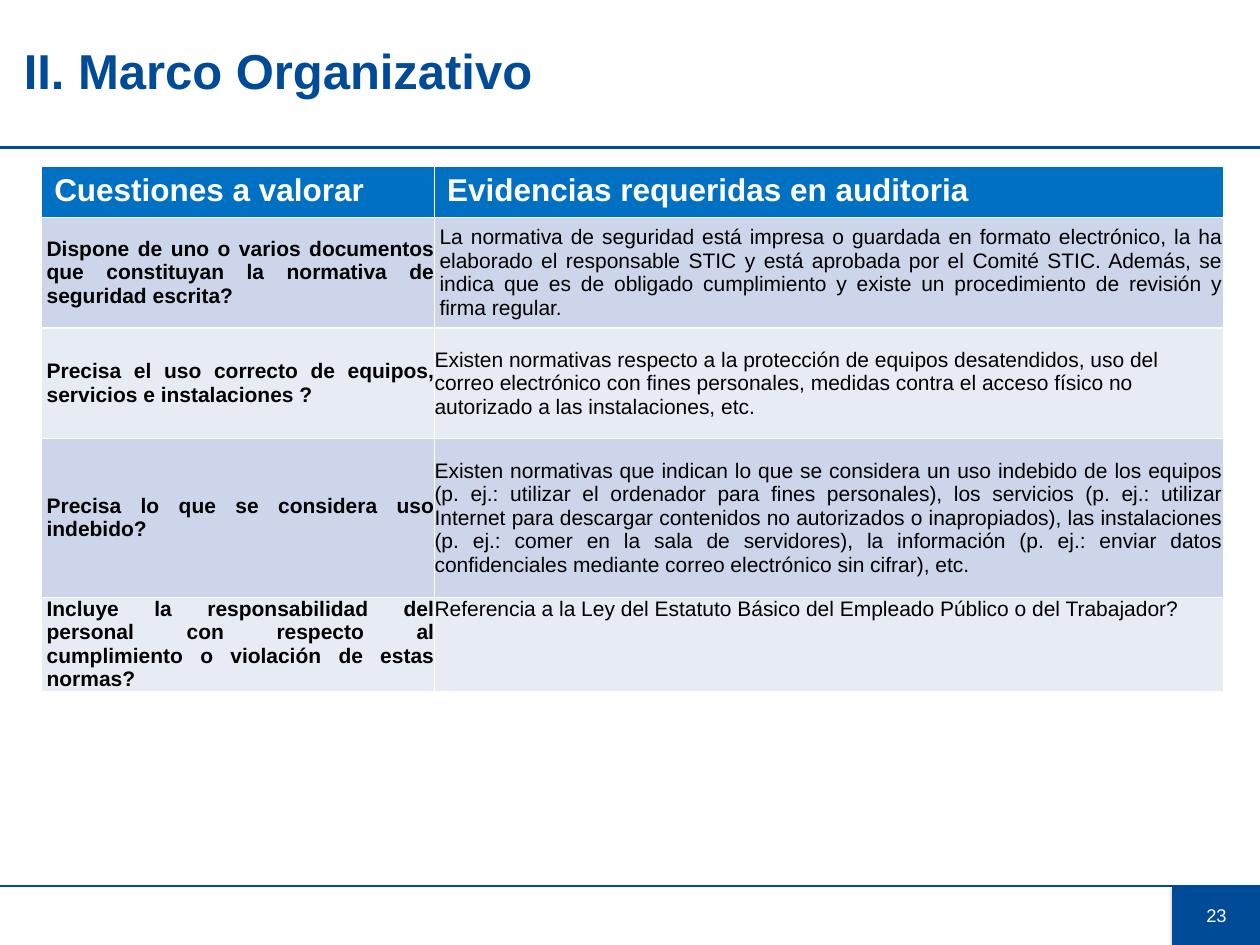
from dataclasses import dataclass

from lxml.etree import SubElement
from pptx import Presentation
from pptx.dml.color import RGBColor
from pptx.enum.shapes import MSO_CONNECTOR, MSO_SHAPE
from pptx.enum.text import MSO_ANCHOR, MSO_AUTO_SIZE, PP_ALIGN
from pptx.oxml.ns import qn
from pptx.slide import Slide
from pptx.table import _Cell
from pptx.util import Cm, Pt

NAVY = RGBColor(0x00, 0x4B, 0x98)
HEADER_BLUE = RGBColor(0x00, 0x70, 0xC2)
BAND_DARK = RGBColor(0xCC, 0xD5, 0xE9)
BAND_LIGHT = RGBColor(0xE7, 0xEB, 0xF4)
WHITE = RGBColor(0xFF, 0xFF, 0xFF)
BLACK = RGBColor(0x00, 0x00, 0x00)
FONT = "Arial"
SLIDE_W, SLIDE_H = Cm(25.4), Cm(19.05)
FOOTER_TOP = Cm(17.86)
INDENT = Cm(0.1)


@dataclass
class Question:
    """A question to assess, with the evidence an audit requires."""

    text: str
    evidence: str
    height: float
    align: PP_ALIGN = PP_ALIGN.LEFT
    indent: int = 0
    anchor: MSO_ANCHOR = MSO_ANCHOR.MIDDLE


HEADINGS = ("Cuestiones a valorar", "Evidencias requeridas en auditoria")
QUESTIONS = [
    Question(
        "Dispone de uno o varios documentos que constituyan la normativa de seguridad escrita?",
        "La normativa de seguridad está impresa o guardada en formato electrónico, la ha "
        "elaborado el responsable STIC y está aprobada por el Comité STIC. Además, se indica "
        "que es de obligado cumplimiento y existe un procedimiento de revisión y firma regular.",
        2.23, align=PP_ALIGN.JUSTIFY, indent=INDENT,
    ),
    Question(
        "Precisa el uso correcto de equipos, servicios e instalaciones ?",
        "Existen normativas respecto a la protección de equipos desatendidos, uso del correo "
        "electrónico con fines personales, medidas contra el acceso físico no autorizado a las "
        "instalaciones, etc.",
        2.23,
    ),
    Question(
        "Precisa lo que se considera uso indebido?",
        "Existen normativas que indican lo que se considera un uso indebido de los equipos "
        "(p. ej.: utilizar el ordenador para fines personales), los servicios (p. ej.: utilizar "
        "Internet para descargar contenidos no autorizados o inapropiados), las instalaciones "
        "(p. ej.: comer en la sala de servidores), la información (p. ej.: enviar datos "
        "confidenciales mediante correo electrónico sin cifrar), etc.",
        3.2, align=PP_ALIGN.JUSTIFY,
    ),
    Question(
        "Incluye la responsabilidad del personal con respecto al cumplimiento o violación de "
        "estas normas? ",
        "Referencia a la Ley del Estatuto Básico del Empleado Público o del Trabajador?",
        1.88, anchor=MSO_ANCHOR.TOP,
    ),
]


def style_font(p, size: float, color: RGBColor, bold: bool = False) -> None:
    """Set the font of a whole paragraph."""
    p.font.name, p.font.size, p.font.bold = FONT, Pt(size), bold
    p.font.color.rgb = color


def add_rule(s: Slide, y: int) -> None:
    """Draw a horizontal rule across the slide."""
    line = s.shapes.add_connector(MSO_CONNECTOR.STRAIGHT, 0, y, SLIDE_W, y)
    line.line.color.rgb, line.line.width = NAVY, Pt(1.5)
    SubElement(line._element.spPr, qn("a:effectLst"))


def add_page_number(s: Slide, number: str) -> None:
    """Draw the page number box with its soft shadow."""
    left = Cm(23.65)
    sp = s.shapes.add_shape(
        MSO_SHAPE.RECTANGLE, left, FOOTER_TOP, SLIDE_W - left, SLIDE_H - FOOTER_TOP)
    sp.fill.solid()
    sp.fill.fore_color.rgb = NAVY
    sp.line.color.rgb, sp.line.width = NAVY, Pt(0.75)
    sp.shadow.inherit = False
    effects = sp._element.spPr.find(qn("a:effectLst"))
    shadow = SubElement(effects, qn("a:outerShdw"), blurRad=str(Pt(3.1)),
                        dist=str(Pt(1.8)), dir="5400000", rotWithShape="0")
    color = SubElement(shadow, qn("a:srgbClr"), val=str(BLACK))
    SubElement(color, qn("a:alpha"), val="35000")
    tf = sp.text_frame
    tf.vertical_anchor = MSO_ANCHOR.MIDDLE
    p = tf.paragraphs[0]
    p.text, p.alignment = number, PP_ALIGN.CENTER
    style_font(p, 10.5, WHITE)


def set_title(s: Slide, text: str) -> None:
    """Fill and place the title."""
    sp = s.shapes.title
    sp.left, sp.top, sp.width, sp.height = Cm(0.48), 0, Cm(24.2), Cm(2.95)
    tf = sp.text_frame
    tf.auto_size, tf.vertical_anchor = MSO_AUTO_SIZE.NONE, MSO_ANCHOR.MIDDLE
    tf.margin_left = tf.margin_right = 0
    p = tf.paragraphs[0]
    p.text, p.alignment, p.line_spacing = text, PP_ALIGN.LEFT, 0.9
    style_font(p, 28, NAVY, bold=True)


def fill_cell(cell: _Cell, text: str, fill: RGBColor, size: float, color: RGBColor,
              bold: bool) -> None:
    """Write a table cell and colour it."""
    cell.fill.solid()
    cell.fill.fore_color.rgb = fill
    p = cell.text_frame.paragraphs[0]
    p.text = text
    style_font(p, size, color, bold)


def set_layout(cell: _Cell, align: PP_ALIGN, indent: int, anchor: MSO_ANCHOR) -> None:
    """Remove the margins of a body cell and place its text."""
    cell.margin_left = cell.margin_right = cell.margin_top = cell.margin_bottom = 0
    cell.vertical_anchor = anchor
    p = cell.text_frame.paragraphs[0]
    p.alignment = align
    p._p.get_or_add_pPr().set("marL", str(indent))


def add_questions(s: Slide) -> None:
    """Build the table of questions and evidence."""
    widths, header_h = (Cm(7.92), Cm(15.9)), Cm(1.03)
    height = header_h + sum(Cm(q.height) for q in QUESTIONS)
    table = s.shapes.add_table(
        len(QUESTIONS) + 1, len(widths), Cm(0.84), Cm(3.35), sum(widths), height).table
    table.rows[0].height = header_h
    for col, (width, heading) in enumerate(zip(widths, HEADINGS)):
        table.columns[col].width = width
        fill_cell(table.cell(0, col), heading, HEADER_BLUE, 18, WHITE, True)
    for row, q in enumerate(QUESTIONS, start=1):
        table.rows[row].height = Cm(q.height)
        band = BAND_DARK if row % 2 else BAND_LIGHT
        question, evidence = table.cell(row, 0), table.cell(row, 1)
        fill_cell(question, q.text, band, 12, BLACK, True)
        set_layout(question, PP_ALIGN.JUSTIFY, INDENT, MSO_ANCHOR.MIDDLE)
        fill_cell(evidence, q.evidence, band, 12, BLACK, False)
        set_layout(evidence, q.align, q.indent, q.anchor)


def main() -> None:
    """Build the slide and save it."""
    prs = Presentation()
    prs.slide_width, prs.slide_height = SLIDE_W, SLIDE_H
    s = prs.slides.add_slide(prs.slide_layouts[5])
    add_rule(s, Cm(2.97))
    add_page_number(s, "23")
    add_rule(s, FOOTER_TOP)
    set_title(s, "II. Marco Organizativo")
    add_questions(s)
    prs.save("out.pptx")


if __name__ == "__main__":
    main()
